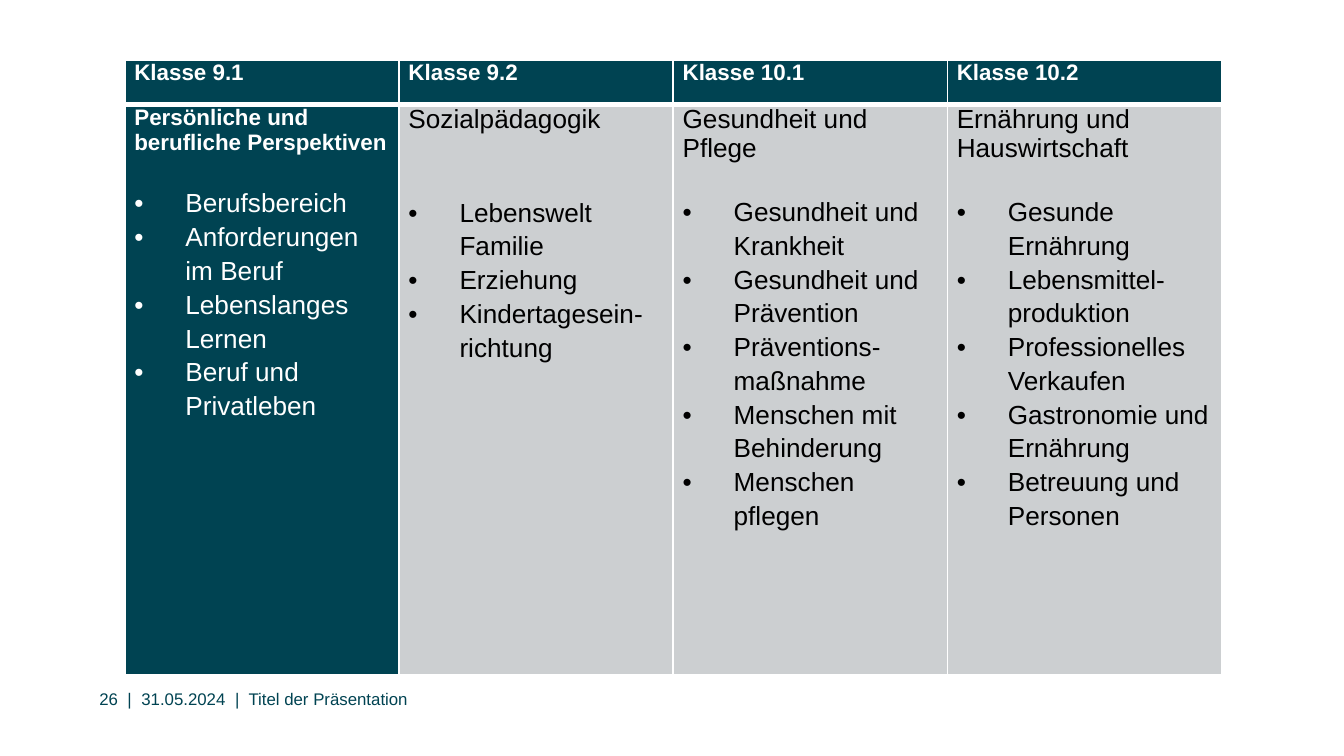
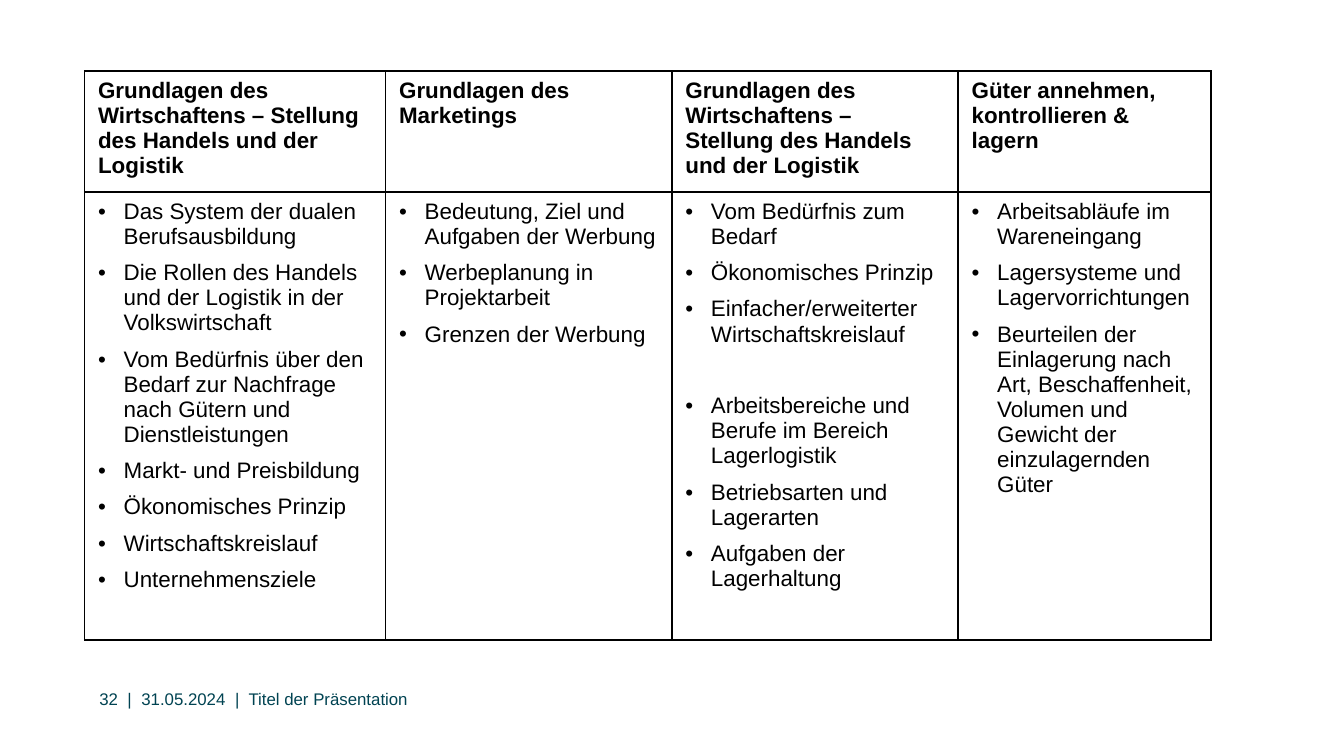
from dataclasses import dataclass

from lxml import etree
from pptx import Presentation
from pptx.dml.color import RGBColor
from pptx.enum.text import MSO_ANCHOR, PP_ALIGN
from pptx.oxml.ns import qn
from pptx.util import Inches, Pt

LEFT, CENTER, RIGHT = PP_ALIGN.LEFT, PP_ALIGN.CENTER, PP_ALIGN.RIGHT
TOP, MIDDLE = MSO_ANCHOR.TOP, MSO_ANCHOR.MIDDLE


@dataclass(frozen=True)
class Theme:
    font: str = "Arial"
    teal: str = "004352"
    gray: str = "CCCFD1"
    white: str = "FFFFFF"
    black: str = "000000"
    footer_size: int = 9
    small_size: int = 12
    body_size: int = 14


THEME = Theme()

# Content: footer
DATE = "31.05.2024"
FOOTER_TITLE = "|  Titel der Präsentation"

# Content: one entry per class: class, topic, space below the topic, items
CLASSES = [
    ("Klasse 9.1", "Persönliche und berufliche Perspektiven", 16,
     ["Berufsbereich", "Anforderungen im Beruf", "Lebenslanges Lernen",
      "Beruf und Privatleben"]),
    ("Klasse 9.2", "Sozialpädagogik", 32,
     ["Lebenswelt Familie", "Erziehung", "Kindertagesein-richtung"]),
    ("Klasse 10.1", "Gesundheit und Pflege", 16,
     ["Gesundheit und Krankheit", "Gesundheit und Prävention",
      "Präventions-maßnahme", "Menschen mit Behinderung", "Menschen pflegen"]),
    ("Klasse 10.2", "Ernährung und Hauswirtschaft", 16,
     ["Gesunde Ernährung", "Lebensmittel-produktion",
      "Professionelles Verkaufen", "Gastronomie und Ernährung",
      "Betreuung und Personen"]),
]

# Content: one entry per trade subject: subject, column width, groups of items
ECONOMY = "Grundlagen des Wirtschaftens – Stellung des Handels und der Logistik"
SUBJECTS = [
    (ECONOMY, 2.24, [[
        "Das System der dualen Berufsausbildung",
        "Die Rollen des Handels und der Logistik in der Volkswirtschaft",
        "Vom Bedürfnis über den Bedarf zur Nachfrage nach Gütern und "
        "Dienstleistungen",
        "Markt- und Preisbildung", "Ökonomisches Prinzip",
        "Wirtschaftskreislauf", "Unternehmensziele"]]),
    ("Grundlagen des Marketings", 2.13, [[
        "Bedeutung, Ziel und Aufgaben der Werbung",
        "Werbeplanung in Projektarbeit", "Grenzen der Werbung"]]),
    (ECONOMY, 2.13, [
        ["Vom Bedürfnis zum Bedarf", "Ökonomisches Prinzip",
         "Einfacher/erweiterter Wirtschaftskreislauf"],
        ["Arbeitsbereiche und Berufe im Bereich Lagerlogistik",
         "Betriebsarten und Lagerarten", "Aufgaben der Lagerhaltung"]]),
    ("Güter annehmen, kontrollieren & lagern", 1.88, [[
        "Arbeitsabläufe im Wareneingang",
        "Lagersysteme und Lagervorrichtungen",
        "Beurteilen der Einlagerung nach Art, Beschaffenheit, Volumen und "
        "Gewicht der einzulagernden Güter"]]),
]
GROUP_GAP = 19


# Text and cell helpers
def write(frame, text, *, size, color=THEME.black, bold=False, align=LEFT,
          bullet_indent=None, before=0, after=0, line_spacing=1.0):
    """Fill the empty first paragraph of the frame, or append another one."""
    paragraph = frame.paragraphs[0]
    if paragraph.runs:
        paragraph = frame.add_paragraph()
    if bullet_indent:
        properties = paragraph._p.get_or_add_pPr()
        properties.set("marL", str(Inches(bullet_indent)))
        properties.set("indent", str(-Inches(bullet_indent)))
        etree.SubElement(properties, qn("a:buFont")).set("typeface", THEME.font)
        etree.SubElement(properties, qn("a:buChar")).set("char", "•")
    paragraph.alignment = align
    paragraph.line_spacing = line_spacing
    paragraph.space_before, paragraph.space_after = Pt(before), Pt(after)
    run = paragraph.add_run()
    run.text = text
    run.font.name, run.font.size, run.font.bold = THEME.font, Pt(size), bold
    run.font.color.rgb = RGBColor.from_string(color)


def style_cell(cell, *, fill, line, top=1, bottom=1, margins=(0.1, 0.05)):
    cell.margin_left = cell.margin_right = Inches(margins[0])
    cell.margin_top = cell.margin_bottom = Inches(margins[1])
    cell.vertical_anchor = TOP
    cell.fill.solid()
    cell.fill.fore_color.rgb = RGBColor.from_string(fill)
    properties = cell._tc.get_or_add_tcPr()
    sides = [("a:lnL", 1), ("a:lnR", 1), ("a:lnT", top), ("a:lnB", bottom)]
    for position, (tag, width) in enumerate(sides):
        border = etree.Element(qn(tag), w=str(Pt(width)))
        solid = etree.SubElement(border, qn("a:solidFill"))
        etree.SubElement(solid, qn("a:srgbClr")).set("val", line)
        properties.insert(position, border)


def add_table(slide, left, top, widths, heights):
    shape = slide.shapes.add_table(
        len(heights), len(widths), Inches(left), Inches(top),
        Inches(sum(widths)), Inches(sum(heights)))
    table = shape.table
    table.first_row = table.horz_banding = False
    for column, width in zip(table.columns, widths):
        column.width = Inches(width)
    for row, height in zip(table.rows, heights):
        row.height = Inches(height)
    return table


def add_slide(presentation, number):
    """Add a blank slide with its footer."""
    slide = presentation.slides.add_slide(presentation.slide_layouts[6])
    left = 0.63
    for text, width, align in [(f"{number}  |", 0.35, RIGHT),
                               (DATE, 0.77, CENTER),
                               (FOOTER_TITLE, 3.54, LEFT)]:
        box = slide.shapes.add_textbox(
            Inches(left), Inches(5.1), Inches(width), Inches(0.2))
        frame = box.text_frame
        frame.word_wrap = True
        frame.vertical_anchor = MIDDLE
        frame.margin_left = frame.margin_right = 0
        frame.margin_top = frame.margin_bottom = 0
        write(frame, text, size=THEME.footer_size, color=THEME.teal, align=align)
        left += width
    return slide


# Slides
def build_classes(presentation):
    slide = add_slide(presentation, 26)
    table = add_table(slide, 0.93, 0.45, [2.04] * len(CLASSES), [0.33, 4.24])
    for column, (name, topic, gap, items) in enumerate(CLASSES):
        first = column == 0
        color = THEME.white if first else THEME.black
        header, body = table.cell(0, column), table.cell(1, column)
        style_cell(header, fill=THEME.teal, line=THEME.white, bottom=3,
                   margins=(0.07, 0))
        style_cell(body, fill=THEME.teal if first else THEME.gray,
                   line=THEME.white, top=3, margins=(0.07, 0))
        write(header.text_frame, name, size=THEME.small_size,
              color=THEME.white, bold=True)
        write(body.text_frame, topic, color=color, bold=first,
              size=THEME.small_size if first else THEME.body_size)
        for index, item in enumerate(items):
            write(body.text_frame, item, size=THEME.body_size, color=color,
                  bullet_indent=0.38, line_spacing=1.15,
                  before=0 if index else gap)


def build_subjects(presentation):
    slide = add_slide(presentation, 32)
    widths = [width for _, width, _ in SUBJECTS]
    table = add_table(slide, 0.63, 0.53, widths, [0.88, 3.33])
    for column, (subject, _, groups) in enumerate(SUBJECTS):
        header, body = table.cell(0, column), table.cell(1, column)
        for cell in (header, body):
            style_cell(cell, fill=THEME.white, line=THEME.black)
        write(header.text_frame, subject, size=THEME.small_size, bold=True)
        for group_index, group in enumerate(groups):
            for index, item in enumerate(group):
                starts_group = group_index > 0 and index == 0
                write(body.text_frame, item, size=THEME.small_size,
                      bullet_indent=0.19, after=6,
                      before=GROUP_GAP if starts_group else 0)


def main():
    presentation = Presentation()
    # Widescreen, 16:9
    presentation.slide_width = Inches(10)
    presentation.slide_height = Inches(10) * 9 // 16
    build_classes(presentation)
    build_subjects(presentation)
    presentation.save("out.pptx")


if __name__ == "__main__":
    main()
